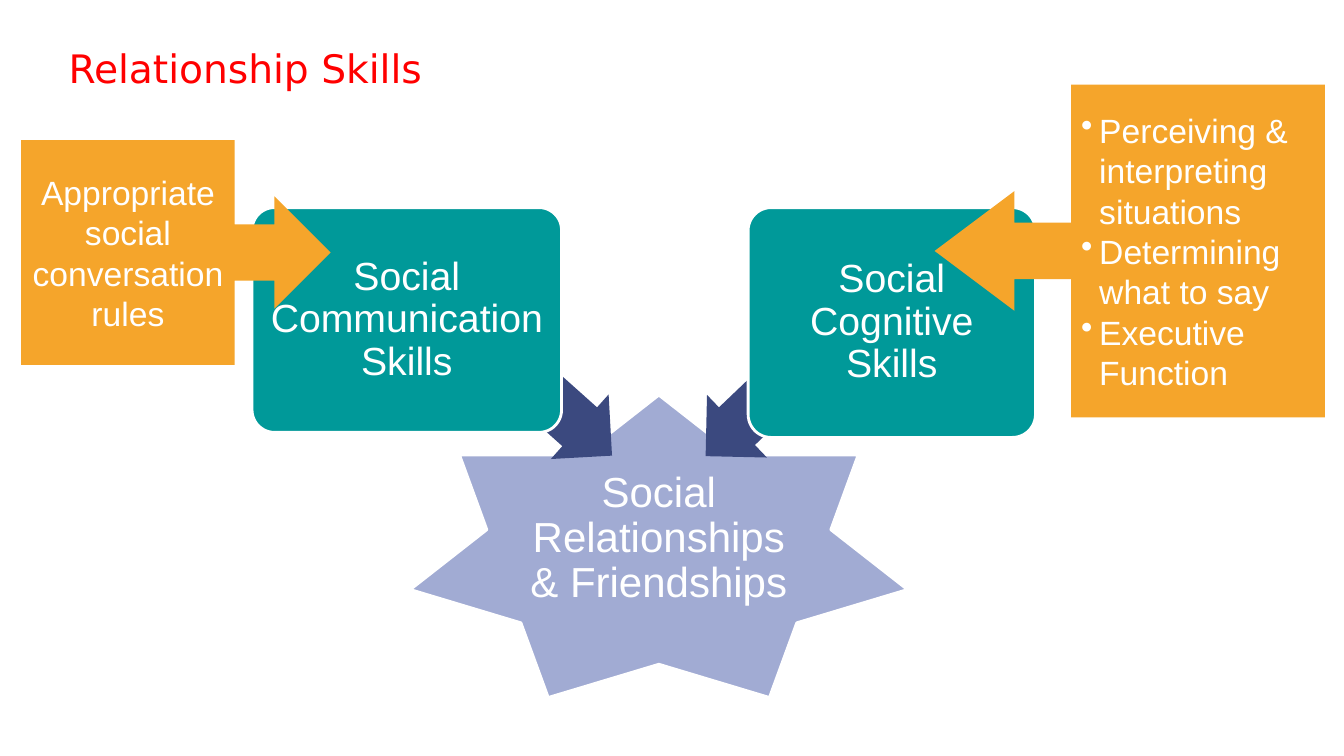
from dataclasses import dataclass

from lxml.etree import SubElement
from pptx import Presentation
from pptx.dml.color import RGBColor
from pptx.enum.shapes import MSO_SHAPE
from pptx.enum.text import MSO_ANCHOR, MSO_AUTO_SIZE, PP_ALIGN
from pptx.oxml.ns import qn
from pptx.util import Inches, Pt

COLORS = {
    "white": "FFFFFF",
    "title": "FF0000",
    "star": "A1ABD3",
    "arrow": "3B497F",
    "skill": "009999",
    "callout": "F5A52B",
}


@dataclass(frozen=True)
class Figure:
    kind: MSO_SHAPE
    box: tuple[float, float, float, float]
    fill: str
    adjustments: tuple[float, ...] = ()
    rotation: float = 0
    outlined: bool = False
    paragraphs: tuple[str, ...] = ()
    size: int = 24
    line_spacing: float = 1.0
    insets: tuple[float, float] = (0.1, 0.05)
    bulleted: bool = False


FIGURES = [
    Figure(MSO_SHAPE.STAR_7_POINT, (4.07, 3.92, 4.93, 3), "star", outlined=True,
           paragraphs=("Social Relationships & Friendships",), size=30,
           line_spacing=0.9, insets=(0.02, 0.02)),
    Figure(MSO_SHAPE.LEFT_ARROW, (4.84, 3.62, 1.41, 0.86), "arrow", (0.6, 0.5), 221.8),
    Figure(MSO_SHAPE.ROUNDED_RECTANGLE, (2.5, 2.06, 3.07, 2.23), "skill", (0.1,),
           outlined=True, paragraphs=("Social Communication Skills",), size=28,
           line_spacing=0.9, insets=(0.06, 0.06)),
    Figure(MSO_SHAPE.LEFT_ARROW, (6.82, 3.65, 1.29, 0.86), "arrow", (0.6, 0.5), 316.3),
    Figure(MSO_SHAPE.ROUNDED_RECTANGLE, (7.42, 2.06, 2.85, 2.28), "skill", (0.1,),
           outlined=True, paragraphs=("Social Cognitive Skills",), size=28,
           line_spacing=0.9, insets=(0.06, 0.06)),
    Figure(MSO_SHAPE.RIGHT_ARROW_CALLOUT, (0.21, 1.39, 3.07, 2.23), "callout",
           (0.25, 0.25, 0.25, 0.69), paragraphs=("Appropriate social conversation rules",)),
    Figure(MSO_SHAPE.LEFT_ARROW_CALLOUT, (9.27, 0.84, 3.87, 3.3), "callout",
           (0.17, 0.18, 0.24, 0.65), bulleted=True,
           paragraphs=("Perceiving & interpreting situations",
                       "Determining what to say", "Executive Function")),
]


def color(name: str) -> RGBColor:
    return RGBColor.from_string(COLORS[name])


def set_values(target, values: dict) -> None:
    for name, value in values.items():
        setattr(target, name, value)


def place(shape, box: tuple[float, float, float, float]) -> None:
    set_values(shape, dict(zip(("left", "top", "width", "height"), map(Inches, box))))


def add_bullet(paragraph) -> None:
    properties = paragraph._p.get_or_add_pPr()
    properties.set("marL", str(Inches(0.18)))
    properties.set("indent", str(-Inches(0.18)))
    SubElement(properties, qn("a:buChar")).set("char", "•")


def write_text(shape, figure: Figure) -> None:
    frame = shape.text_frame
    horizontal, vertical = map(Inches, figure.insets)
    set_values(frame, {
        "word_wrap": True, "vertical_anchor": MSO_ANCHOR.MIDDLE,
        "margin_left": horizontal, "margin_right": horizontal,
        "margin_top": vertical, "margin_bottom": vertical,
    })
    frame.text = "\n".join(figure.paragraphs)
    for paragraph in frame.paragraphs:
        paragraph.alignment = PP_ALIGN.LEFT if figure.bulleted else PP_ALIGN.CENTER
        paragraph.line_spacing = figure.line_spacing
        if figure.bulleted:
            add_bullet(paragraph)
        set_values(paragraph.font, {"name": "Arial", "size": Pt(figure.size)})
        paragraph.font.color.rgb = color("white")


def add_figure(slide, figure: Figure) -> None:
    shape = slide.shapes.add_shape(figure.kind, *map(Inches, figure.box))
    shape.shadow.inherit = False
    shape.rotation = figure.rotation
    for index, value in enumerate(figure.adjustments):
        shape.adjustments[index] = value
    shape.fill.solid()
    shape.fill.fore_color.rgb = color(figure.fill)
    if figure.outlined:
        shape.line.color.rgb = color("white")
        shape.line.width = Pt(2)
    else:
        shape.line.fill.background()
    if figure.paragraphs:
        write_text(shape, figure)


def add_title(slide) -> None:
    title = slide.shapes.title
    place(title, (0.68, 0.44, 11.78, 0.85))
    title.line.color.rgb = color("white")
    title.line.width = Pt(0.75)
    frame = title.text_frame
    frame.text = "Relationship Skills"
    set_values(frame, {
        "auto_size": MSO_AUTO_SIZE.NONE, "vertical_anchor": MSO_ANCHOR.TOP,
        "margin_left": 0, "margin_right": 0, "margin_top": 0, "margin_bottom": 0,
    })
    paragraph = frame.paragraphs[0]
    paragraph.alignment = PP_ALIGN.LEFT
    set_values(paragraph.font, {"name": "DejaVu Sans", "size": Pt(28)})
    paragraph.font.color.rgb = color("title")


def main() -> None:
    presentation = Presentation()
    set_values(presentation, {"slide_width": Inches(13.33), "slide_height": Inches(7.5)})
    slide = presentation.slides.add_slide(presentation.slide_layouts[5])
    add_title(slide)
    for figure in FIGURES:
        add_figure(slide, figure)
    presentation.save("out.pptx")


if __name__ == "__main__":
    main()
